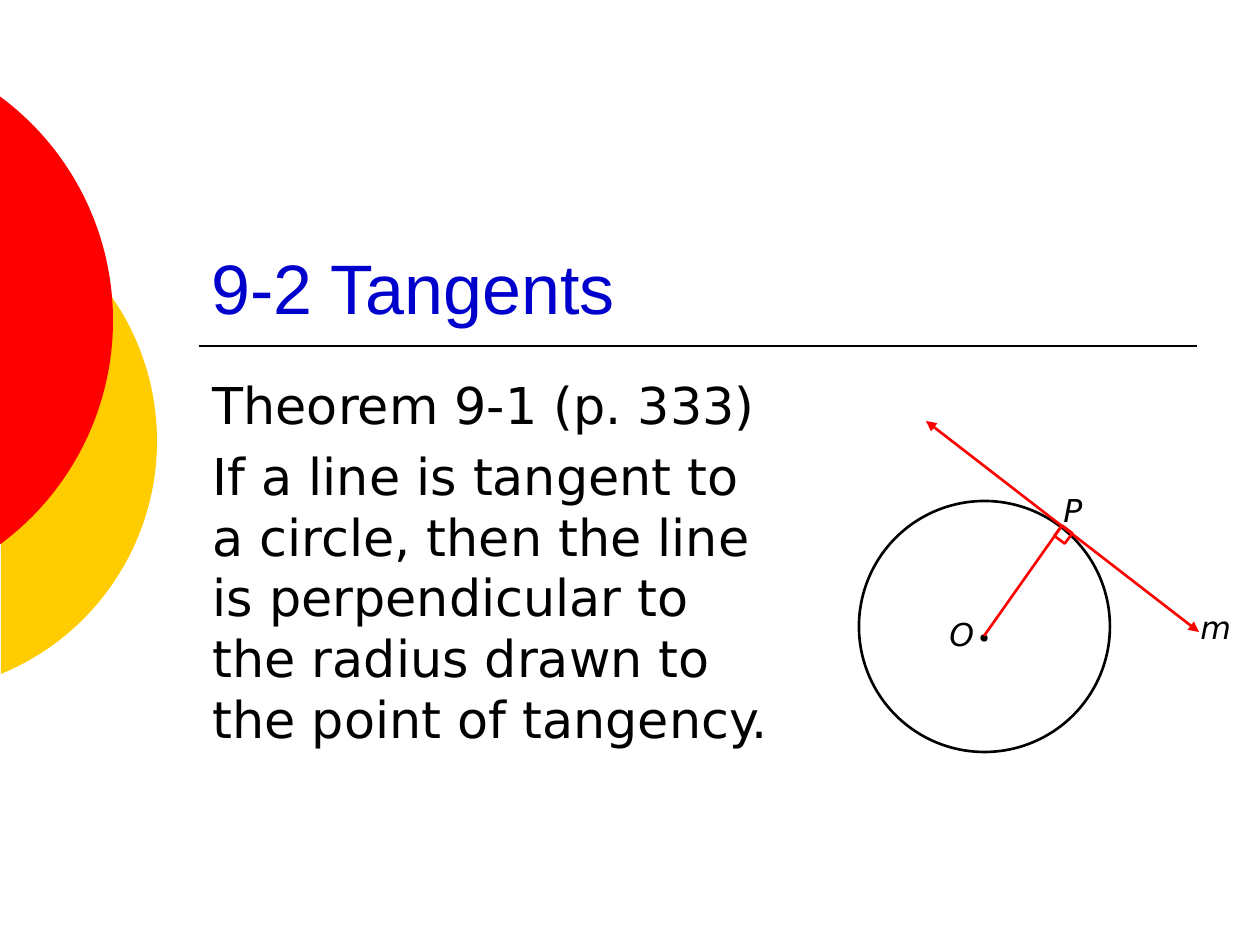
from math import acos, cos, sin, tan

from lxml import etree
from pptx import Presentation
from pptx.dml.color import RGBColor
from pptx.enum.shapes import MSO_CONNECTOR, MSO_SHAPE
from pptx.enum.text import MSO_ANCHOR, MSO_AUTO_SIZE, PP_ALIGN
from pptx.oxml.ns import qn
from pptx.util import Emu, Pt

STRAIGHT = MSO_CONNECTOR.STRAIGHT
OVAL, RECTANGLE = MSO_SHAPE.OVAL, MSO_SHAPE.RECTANGLE
TOP, BOTTOM = MSO_ANCHOR.TOP, MSO_ANCHOR.BOTTOM
NO_FIT, LEFT = MSO_AUTO_SIZE.NONE, PP_ALIGN.LEFT

BLACK = RGBColor(0x00, 0x00, 0x00)
RED = RGBColor(0xFF, 0x00, 0x00)
YELLOW = RGBColor(0xFF, 0xCC, 0x00)
BLUE = RGBColor(0x00, 0x00, 0xCC)
HEADING_FONT, BODY_FONT = "Arial", "DejaVu Sans"

TITLE = ["9-2 Tangents"]
THEOREM = [
    "Theorem 9-1 (p. 333)",
    "If a line is tangent to a circle, then the line is perpendicular "
    "to the radius drawn to the point of tangency.",
]
TITLE_AREA = (199, 136, 998, 199)
THEOREM_AREA = (200, 367, 598, 462)
RULE = ((199, 346), (1197, 346))

DISCS = [
    {"left": -347, "top": 189, "size": 504, "edge": 1, "color": YELLOW},
    {"left": -444, "top": 42, "size": 557, "edge": -1, "color": RED},
]

CIRCLE = (859, 501, 251, 251)
CENTER_DOT = (981, 635, 6, 6)
RIGHT_ANGLE = (1057, 528, 13, 13)
RIGHT_ANGLE_TURN = 306.7
TANGENT = ((926, 421), (1199, 632))
RADIUS = ((984, 636), (1061, 527))
LABELS = [
    ("O", (937, 609, 42, 50)),
    ("P", (1051, 485, 42, 50)),
    ("m", (1188, 602, 49, 50)),
]


def px(length):
    return Emu(round(length * 914400 / 126))


def write(box, texts, font, size, color, gap=0, italic=False):
    frame = box.text_frame
    for index, text in enumerate(texts):
        para = frame.add_paragraph() if index else frame.paragraphs[0]
        para.alignment = LEFT
        para.space_before = Pt(gap)
        span = para.add_run()
        span.text = text
        span.font.name = font
        span.font.size = Pt(size)
        span.font.italic = italic
        span.font.color.rgb = color


def fill_placeholder(box, area, anchor):
    box.left, box.top, box.width, box.height = map(px, area)
    box.text_frame.word_wrap = True
    box.text_frame.auto_size = NO_FIT
    box.text_frame.vertical_anchor = anchor


def add_step(outline, tag, points):
    step = etree.SubElement(outline, qn(tag))
    for x, y in points:
        etree.SubElement(step, qn("a:pt"), x=str(px(x)), y=str(px(y)))


def arc_curve(radius, start, sweep):
    pull = 4 / 3 * tan(sweep / 4)
    end = start + sweep
    units = [
        (cos(start) - pull * sin(start), sin(start) + pull * cos(start)),
        (cos(end) + pull * sin(end), sin(end) - pull * cos(end)),
        (cos(end), sin(end)),
    ]
    return [(radius * (1 + x), radius * (1 + y)) for x, y in units]


def add_disc(page, left, top, size, edge, color):
    right, bottom = left + size, top + size
    builder = page.shapes.build_freeform(px(left), px(top))
    corners = [(right, top), (right, bottom), (left, bottom)]
    builder.add_line_segments([(px(x), px(y)) for x, y in corners], close=True)
    disc = builder.convert_to_shape()

    radius = size / 2
    half = acos((edge - left - radius) / radius)
    outline = next(disc._element.iter(qn("a:path")))
    for step in list(outline):
        outline.remove(step)
    add_step(outline, "a:moveTo", [(edge - left, radius * (1 - sin(half)))])
    for start in (-half, 0):
        add_step(outline, "a:cubicBezTo", arc_curve(radius, start, half))
    add_step(outline, "a:close", [])

    disc.shadow.inherit = False
    disc.fill.solid()
    disc.fill.fore_color.rgb = color
    disc.line.fill.background()


def add_outline(page, kind, area, color, width, filled=False):
    shape = page.shapes.add_shape(kind, *map(px, area))
    shape.shadow.inherit = False
    if filled:
        shape.fill.solid()
        shape.fill.fore_color.rgb = color
    else:
        shape.fill.background()
    shape.line.color.rgb = color
    shape.line.width = Pt(width)
    return shape


def add_line(page, ends, color, width, arrows=False):
    (x1, y1), (x2, y2) = ends
    line = page.shapes.add_connector(STRAIGHT, px(x1), px(y1), px(x2), px(y2))
    line.line.color.rgb = color
    line.line.width = Pt(width)
    if arrows:
        stroke = line.line._get_or_add_ln()
        for end in ("a:headEnd", "a:tailEnd"):
            etree.SubElement(stroke, qn(end), type="triangle")
    etree.SubElement(line._element.spPr, qn("a:effectLst"))


def main():
    deck = Presentation()
    deck.slide_width, deck.slide_height = px(1260), px(945)
    page = deck.slides.add_slide(deck.slide_layouts[0])

    title, theorem = page.placeholders
    fill_placeholder(title, TITLE_AREA, BOTTOM)
    write(title, TITLE, HEADING_FONT, 40, BLUE)
    fill_placeholder(theorem, THEOREM_AREA, TOP)
    write(theorem, THEOREM, BODY_FONT, 29, BLACK, gap=5.8)

    add_line(page, RULE, BLACK, 1)
    for disc in DISCS:
        add_disc(page, **disc)

    add_outline(page, OVAL, CENTER_DOT, BLACK, 0.75, filled=True)
    add_outline(page, OVAL, CIRCLE, BLACK, 1.5)
    add_line(page, TANGENT, RED, 1.5, arrows=True)
    add_line(page, RADIUS, RED, 1.5)
    for text, area in LABELS:
        label = page.shapes.add_textbox(*map(px, area))
        label.text_frame.word_wrap = True
        write(label, [text], BODY_FONT, 18, BLACK, italic=True)
    add_outline(page, RECTANGLE, RIGHT_ANGLE, RED, 1.5).rotation = RIGHT_ANGLE_TURN

    deck.save("out.pptx")


if __name__ == "__main__":
    main()
